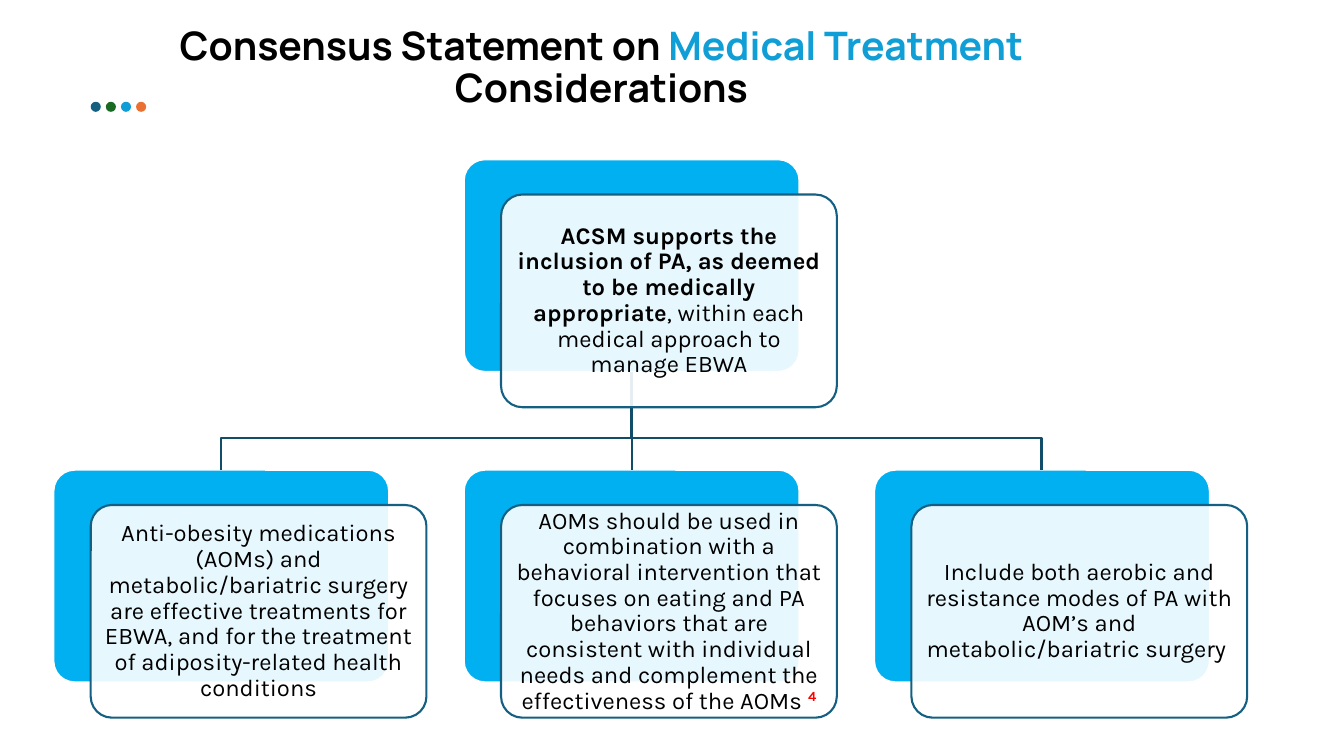
from dataclasses import dataclass

from lxml.etree import SubElement
from pptx import Presentation
from pptx.dml.color import RGBColor
from pptx.enum.shapes import MSO_CONNECTOR as CONN, MSO_SHAPE as SHAPE
from pptx.enum.text import MSO_ANCHOR as ANCHOR, MSO_AUTO_SIZE as AUTO, PP_ALIGN as ALIGN
from pptx.oxml.ns import qn
from pptx.shapes.autoshape import Shape
from pptx.slide import Slide
from pptx.text.text import TextFrame
from pptx.util import Emu, Pt

BLACK, WHITE, RED = "000000", "FFFFFF", "FF0000"
SKY, BLUE, TEAL, DARK_TEAL = "00B0F0", "0F9ED5", "156082", "114D68"
GREEN, ORANGE = "196B24", "E97132"
BOX_W, BOX_H = 333, 211
SHIFT_X, SHIFT_Y = 37, 35
ROOT_Y, CHILD_Y, BUS_Y = 158, 466, 435
CHILD_X, CHILD_STEP = 53, 407


@dataclass(frozen=True)
class Run:
    text: str
    color: str = BLACK
    bold: bool = False
    superscript: bool = False


@dataclass(frozen=True)
class Node:
    x: int
    y: int
    runs: tuple[Run, ...]


TITLE = (
    Run("Consensus Statement on ", bold=True),
    Run("Medical Treatment ", BLUE, True),
    Run("Considerations", bold=True),
)
ROOT = Node(CHILD_X + CHILD_STEP, ROOT_Y, (
    Run("ACSM supports the inclusion of PA, as deemed to be medically appropriate", bold=True),
    Run(", within each medical approach to manage EBWA"),
))
CHILD_RUNS = (
    (Run("Anti-obesity medications (AOMs) and metabolic/bariatric surgery are effective "
         "treatments for EBWA, and for the treatment of adiposity-related health conditions"),),
    (Run("AOMs should be used in combination with a behavioral intervention that focuses on "
         "eating and PA behaviors that are consistent with individual needs and complement "
         "the effectiveness of the AOMs "),
     Run("4", RED, True, True)),
    (Run("Include both aerobic and resistance modes of PA with AOM’s and "
         "metabolic/bariatric surgery "),),
)
CHILDREN = [Node(CHILD_X + i * CHILD_STEP, CHILD_Y, runs) for i, runs in enumerate(CHILD_RUNS)]


def px(n: int) -> Emu:
    """Turn px, a hundred to the inch, into EMU."""
    return Emu(n * 9144)


def rgb(color: str) -> RGBColor:
    """Turn a hex string into a colour."""
    return RGBColor.from_string(color)


def write(tf: TextFrame, runs: tuple[Run, ...], font: str, size: int) -> None:
    """Write one centred paragraph, run by run."""
    tf.word_wrap = True
    p = tf.paragraphs[0]
    p.alignment = ALIGN.CENTER
    p.line_spacing = 0.9
    for run in runs:
        r = p.add_run()
        r.text = run.text
        r.font.name = font
        r.font.size = Pt(size)
        r.font.bold = run.bold
        r.font.color.rgb = rgb(run.color)
        if run.superscript:
            r.font._element.set("baseline", "30000")


def add_dot(slide: Slide, x: int, color: str) -> None:
    """Add one small dot beside the title."""
    s = slide.shapes.add_shape(SHAPE.OVAL, px(x), px(101), px(10), px(10))
    s.shadow.inherit = False
    s.fill.solid()
    s.fill.fore_color.rgb = rgb(color)
    s.line.fill.background()


def add_box(slide: Slide, x: int, y: int, fill: str, line: str) -> Shape:
    """Add one rounded box of the chart."""
    s = slide.shapes.add_shape(SHAPE.ROUNDED_RECTANGLE, px(x), px(y), px(BOX_W), px(BOX_H))
    s.adjustments[0] = 0.1
    s.shadow.inherit = False
    s.fill.solid()
    s.fill.fore_color.rgb = rgb(fill)
    s.line.color.rgb = rgb(line)
    s.line.width = Pt(1.5)
    return s


def add_card(slide: Slide, node: Node) -> None:
    """Add the translucent card that carries a node's text."""
    s = add_box(slide, node.x + SHIFT_X, node.y + SHIFT_Y, WHITE, TEAL)
    color = s.fill._xPr.find(qn("a:solidFill"))[0]
    SubElement(color, qn("a:alpha"), val="90000")
    tf = s.text_frame
    tf.vertical_anchor = ANCHOR.MIDDLE
    tf.margin_left = tf.margin_right = tf.margin_top = tf.margin_bottom = px(7)
    write(tf, node.runs, "Karla", 17)


def add_branch(slide: Slide, parent: Node, child: Node) -> None:
    """Add the bent line from a parent's bottom to a child's top."""
    x0, x1 = (px(n.x + BOX_W // 2) for n in (parent, child))
    builder = slide.shapes.build_freeform(x0, px(parent.y + BOX_H))
    builder.add_line_segments(
        [(x0, px(BUS_Y)), (x1, px(BUS_Y)), (x1, px(child.y))], close=False)
    s = builder.convert_to_shape()
    s.shadow.inherit = False
    s.fill.background()
    s.line.color.rgb = rgb(DARK_TEAL)
    s.line.width = Pt(1.5)


def add_trunk(slide: Slide, top: Shape, bottom: Shape) -> None:
    """Join the bottom of one box to the top of the box below it."""
    c = slide.shapes.add_connector(CONN.STRAIGHT, 0, 0, 0, 0)
    c.begin_connect(top, 2)
    c.end_connect(bottom, 0)
    c.line.color.rgb = rgb(DARK_TEAL)
    c.line.width = Pt(1.5)
    SubElement(c._element.spPr, qn("a:effectLst"))


def main() -> None:
    """Build the slide and save it."""
    prs = Presentation()
    prs.slide_width, prs.slide_height = px(1333), px(750)
    slide = prs.slides.add_slide(prs.slide_layouts[6])
    for i, color in enumerate((TEAL, GREEN, BLUE, ORANGE)):
        add_dot(slide, 90 + 15 * i, color)

    tf = slide.shapes.add_textbox(px(150), px(21), px(893), px(95)).text_frame
    tf.auto_size = AUTO.SHAPE_TO_FIT_TEXT
    write(tf, TITLE, "Manrope", 28)

    nodes = [ROOT, *CHILDREN]
    backs = [add_box(slide, n.x, n.y, SKY, WHITE) for n in nodes]
    left, _, right = CHILDREN
    add_branch(slide, ROOT, right)
    add_trunk(slide, backs[0], backs[2])
    add_branch(slide, ROOT, left)
    for node in nodes:
        add_card(slide, node)
    prs.save("out.pptx")


if __name__ == "__main__":
    main()
